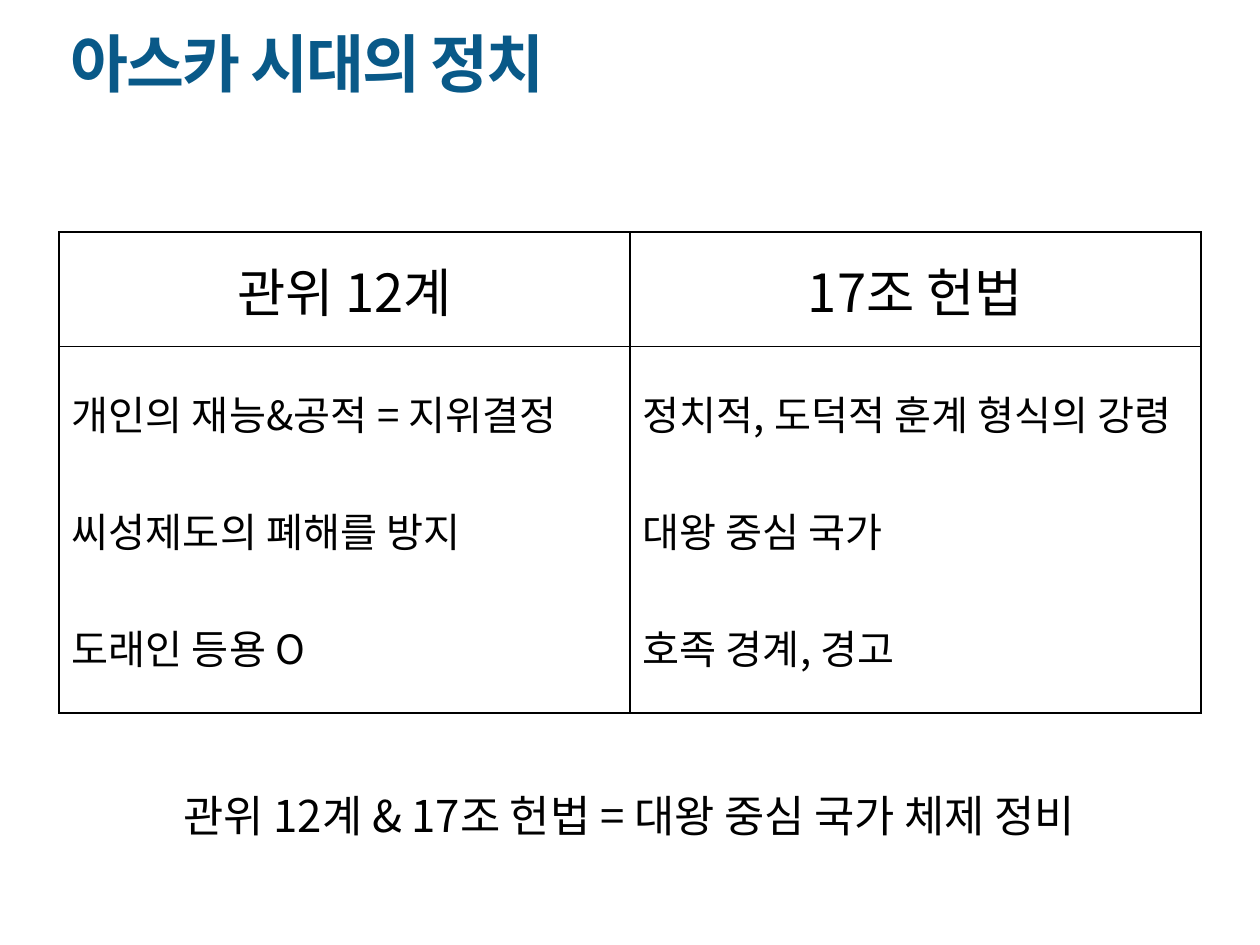
from pptx import Presentation
from pptx.dml.color import RGBColor
from pptx.enum.text import MSO_ANCHOR, PP_ALIGN
from pptx.oxml.ns import qn
from pptx.util import Inches, Pt
from lxml.etree import SubElement

FONT = "Noto Sans CJK KR"
COLORS = {"title": "095988", "text": "000000", "cell": "FFFFFF", "border": "000000"}
HEADERS = ["관위 12계", "17조 헌법"]
POINTS = [
    ["개인의 재능&공적 = 지위결정", "씨성제도의 폐해를 방지", "도래인 등용 O"],
    ["정치적, 도덕적 훈계 형식의 강령", "대왕 중심 국가", "호족 경계, 경고"],
]
SUMMARY = "관위 12계 & 17조 헌법 = 대왕 중심 국가 체제 정비"


def box(*lengths):
    return [Inches(v) for v in lengths]


def write(tf, lines, size, color="text", align=PP_ALIGN.LEFT, gap=0, bold=False):
    """Write one paragraph per line, with a gap in points between them."""
    for i, line in enumerate(lines):
        p = tf.add_paragraph() if i else tf.paragraphs[0]
        p.text = line
        p.alignment = align
        p.space_before = Pt(gap if i else 0)
        font = p.font
        font.name, font.size, font.bold = FONT, Pt(size), bold
        font.color.rgb = RGBColor.from_string(COLORS[color])
        SubElement(font._element, qn("a:ea"), typeface=FONT)


def add_title(s, text):
    title = s.shapes.title
    title.left, title.top, title.width, title.height = box(0.46, 0.16, 7.68, 0.74)
    tf = title.text_frame
    tf.vertical_anchor = MSO_ANCHOR.MIDDLE
    write(tf, [text], 36, "title", bold=True)
    p = tf.paragraphs[0]
    p.line_spacing = 0.9
    p.font._element.set("spc", "-120")


def set_borders(cell):
    tc_pr = cell._tc.get_or_add_tcPr()
    for i, side in enumerate(("lnL", "lnR", "lnT", "lnB")):
        ln = tc_pr.makeelement(qn(f"a:{side}"), {"w": str(Pt(1))})
        fill = SubElement(ln, qn("a:solidFill"))
        SubElement(fill, qn("a:srgbClr"), val=COLORS["border"])
        tc_pr.insert(i, ln)


def fill_cell(cell, lines, size, **style):
    cell.fill.solid()
    cell.fill.fore_color.rgb = RGBColor.from_string(COLORS["cell"])
    cell.vertical_anchor = MSO_ANCHOR.MIDDLE
    set_borders(cell)
    write(cell.text_frame, lines, size, **style)


def add_comparison(s):
    table = s.shapes.add_table(2, len(HEADERS), *box(0.47, 1.84, 9.06, 3.82)).table
    for row, height in zip(table.rows, (0.91, 2.91)):
        row.height = Inches(height)
    for col, (header, points) in enumerate(zip(HEADERS, POINTS)):
        fill_cell(table.cell(0, col), [header], 30, align=PP_ALIGN.CENTER)
        fill_cell(table.cell(1, col), points, 23, gap=33.5)


def add_summary(s, text):
    tf = s.shapes.add_textbox(*box(1.02, 6.21, 7.95, 0.94)).text_frame
    tf.word_wrap = True
    write(tf, [text], 25, align=PP_ALIGN.CENTER)


def main():
    prs = Presentation()
    prs.slide_width, prs.slide_height = box(10, 7.5)
    s = prs.slides.add_slide(prs.slide_layouts[5])
    add_title(s, "아스카 시대의 정치")
    add_comparison(s)
    add_summary(s, SUMMARY)
    prs.save("out.pptx")


if __name__ == "__main__":
    main()
